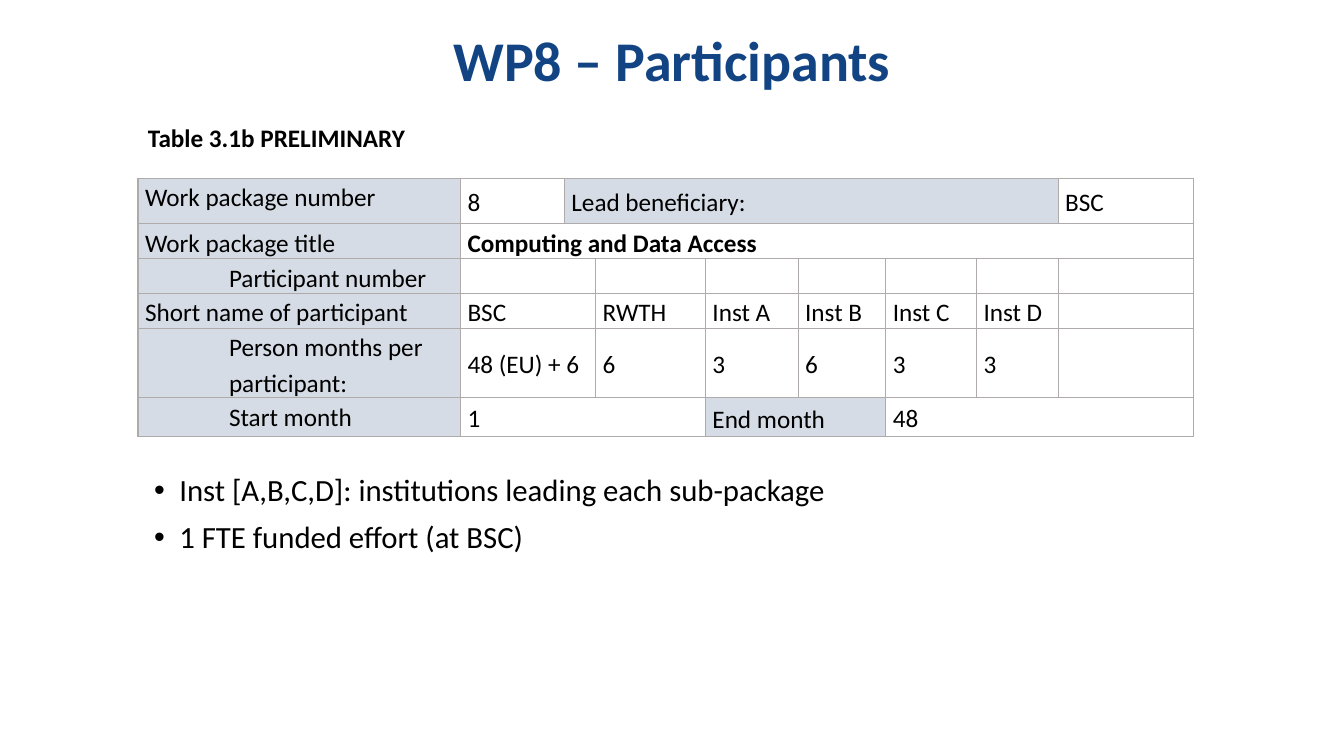
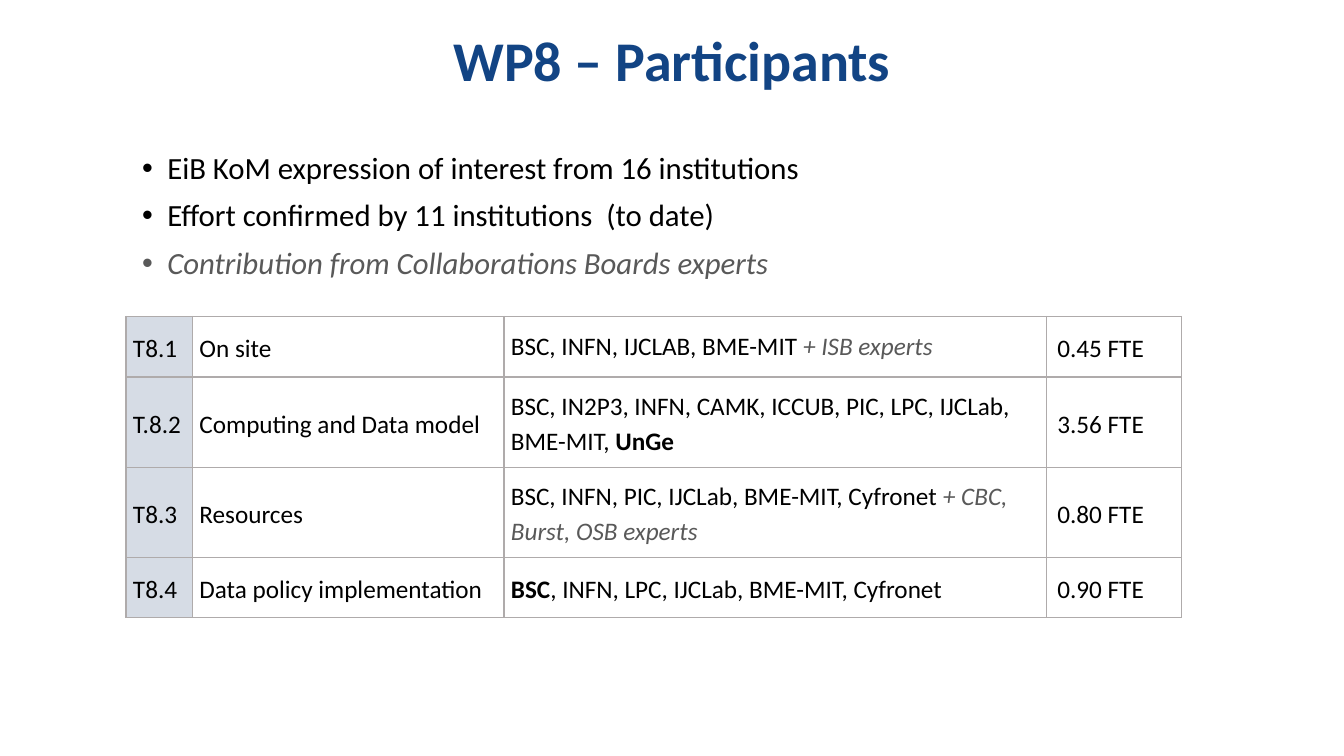
from dataclasses import dataclass, field

import lxml.etree
import pptx
import pptx.dml.color
import pptx.enum.shapes
import pptx.enum.text
import pptx.oxml.ns
import pptx.util

Pt = pptx.util.Pt
Rgb = pptx.dml.color.RGBColor
Anchor = pptx.enum.text.MSO_ANCHOR
Align = pptx.enum.text.PP_ALIGN
qn = pptx.oxml.ns.qn


class Theme:
    font = "Calibri"
    title_colour = "124484"
    text_colour = "000000"
    aside_colour = "595959"
    paper = "FFFFFF"
    label_fill = "D6DCE5"
    border = "AFABAB"
    border_width = 1
    paper_opacity = 60
    title_size = 40
    bullet_size = 22
    table_size = 18
    emphasis = {
        "plain": {},
        "bold": {"bold": True},
        "aside": {"italic": True, "colour": aside_colour},
    }


@dataclass
class Entry:
    content: object = ""
    span: int = 1
    label: bool = False
    anchor: object = Anchor.MIDDLE
    indent: float = 0
    padding: float = 0
    paragraph: dict = field(default_factory=lambda: {"line_spacing": 1.15})


def apply(target, values):
    for name, value in values.items():
        setattr(target, name, value)


def add_xml(parent, tag, **attributes):
    element = lxml.etree.SubElement(parent, qn(tag))
    for name, value in attributes.items():
        element.set(name, str(value))
    return element


class Deck:
    def __init__(self, theme, width, height):
        self.theme = theme
        self.presentation = pptx.Presentation()
        apply(self.presentation, {"slide_width": Pt(width), "slide_height": Pt(height)})
        self.width = width
        self.slide = None

    def new_slide(self, title):
        self.slide = self.presentation.slides.add_slide(self.presentation.slide_layouts[6])
        heading = self.text_box(0, 20.2, self.width, 63.4)
        self.add_text(heading.paragraphs[0], [(title, "bold")], self.theme.title_size,
                      {"alignment": Align.CENTER, "line_spacing": 0.9},
                      self.theme.title_colour)

    def text_box(self, left, top, width, height, wrap=True):
        box = self.slide.shapes.add_textbox(Pt(left), Pt(top), Pt(width), Pt(height))
        box.text_frame.word_wrap = wrap
        return box.text_frame

    def add_text(self, paragraph, content, size, layout, colour=None):
        apply(paragraph, layout)
        runs = [(content, "plain")] if isinstance(content, str) else content
        for text, emphasis in runs:
            run = paragraph.add_run()
            run.text = text
            values = {"name": self.theme.font, "size": Pt(size), "bold": False,
                      "italic": False, **self.theme.emphasis[emphasis]}
            run_colour = values.pop("colour", colour or self.theme.text_colour)
            apply(run.font, values)
            run.font.color.rgb = Rgb.from_string(run_colour)

    def caption(self, text, left, top, width, height):
        frame = self.text_box(left, top, width, height, wrap=False)
        self.add_text(frame.paragraphs[0], [(text, "bold")], self.theme.table_size, {})

    def bullets(self, points, left, top, width, height):
        panel = self.slide.shapes.add_shape(
            pptx.enum.shapes.MSO_SHAPE.RECTANGLE, Pt(left), Pt(top), Pt(width), Pt(height))
        panel.shadow.inherit = False
        panel.line.fill.background()
        panel.fill.solid()
        panel.fill.fore_color.rgb = Rgb.from_string(self.theme.paper)
        paper = panel._element.spPr.find(qn("a:solidFill")).find(qn("a:srgbClr"))
        add_xml(paper, "a:alpha", val=self.theme.paper_opacity * 1000)
        frame = panel.text_frame
        apply(frame, {"word_wrap": True, "vertical_anchor": Anchor.TOP,
                      "margin_left": Pt(11.5), "margin_top": Pt(14.4),
                      "margin_right": Pt(14.4), "margin_bottom": Pt(14.4)})
        for index, point in enumerate(points):
            paragraph = frame.add_paragraph() if index else frame.paragraphs[0]
            properties = paragraph._p.get_or_add_pPr()
            properties.set("marL", str(Pt(18)))
            properties.set("indent", str(-Pt(18)))
            add_xml(properties, "a:buFont", typeface="Arial")
            add_xml(properties, "a:buChar", char="•")
            self.add_text(paragraph, point, self.theme.bullet_size,
                          {"alignment": Align.LEFT, "line_spacing": 0.9,
                           "space_before": Pt(10 if index else 0)})

    def table(self, rows, left, top, widths, heights):
        frame = self.slide.shapes.add_table(
            len(heights), len(widths), Pt(left), Pt(top), Pt(sum(widths)), Pt(sum(heights)))
        grid = frame.table
        apply(grid, {"first_row": False, "horz_banding": False})
        for column, width in zip(grid.columns, widths):
            column.width = Pt(width)
        for row, height in zip(grid.rows, heights):
            row.height = Pt(height)
        for cell in grid.iter_cells():
            self.frame_cell(cell)
        for row_index, entries in enumerate(rows):
            column_index = 0
            for entry in entries:
                cell = grid.cell(row_index, column_index)
                column_index += entry.span
                if entry.span > 1:
                    cell.merge(grid.cell(row_index, column_index - 1))
                self.fill_cell(cell, entry)

    def frame_cell(self, cell):
        properties = cell._tc.get_or_add_tcPr()
        for side in ("a:lnL", "a:lnR", "a:lnT", "a:lnB"):
            line = add_xml(properties, side, w=Pt(self.theme.border_width))
            add_xml(add_xml(line, "a:solidFill"), "a:srgbClr", val=self.theme.border)
        apply(cell, {"margin_left": Pt(5), "margin_right": Pt(5),
                     "margin_top": Pt(0), "margin_bottom": Pt(0)})
        cell.fill.solid()
        cell.fill.fore_color.rgb = Rgb.from_string(self.theme.paper)

    def fill_cell(self, cell, entry):
        apply(cell, {"vertical_anchor": entry.anchor, "margin_top": Pt(entry.padding),
                     "margin_bottom": Pt(entry.padding)})
        if entry.label:
            cell.fill.fore_color.rgb = Rgb.from_string(self.theme.label_fill)
        if entry.content:
            paragraph = cell.text_frame.paragraphs[0]
            if entry.indent:
                properties = paragraph._p.get_or_add_pPr()
                properties.set("marL", str(Pt(entry.indent)))
                properties.set("indent", "0")
            self.add_text(paragraph, entry.content, self.theme.table_size, entry.paragraph)


def row_label(text, indent=0):
    return Entry(text, label=True, anchor=Anchor.TOP, indent=indent)


def participants(label, first, *others):
    return [label, Entry(first, span=2), *map(Entry, others)]


def task(number, name, institutions, effort, spacing=1.15):
    return [Entry(number, label=True), Entry(name),
            Entry(institutions, paragraph={"line_spacing": spacing, "space_after": Pt(6)}),
            Entry(effort, indent=3)]


def main():
    deck = Deck(Theme, 960, 540)
    title = "WP8 – Participants"
    label_indent = 60

    deck.new_slide(title)
    deck.bullets(["Inst [A,B,C,D]: institutions leading each sub-package",
                  "1 FTE funded effort (at BSC)"], 98.6, 324.7, 796.3, 113)
    work_package = [
        [row_label("Work package number"), Entry("8"),
         Entry("Lead beneficiary:", span=6, label=True), Entry("BSC")],
        [row_label("Work package title"),
         Entry([("Computing and Data Access", "bold")], span=8)],
        participants(row_label("Participant number", label_indent), *[""] * 7),
        participants(row_label("Short name of participant"),
                     "BSC", "RWTH", "Inst A", "Inst B", "Inst C", "Inst D", ""),
        participants(row_label("Person months per participant:", label_indent),
                     "48 (EU) + 6", "6", "3", "6", "3", "3", ""),
        [row_label("Start month", label_indent), Entry("1", span=3),
         Entry("End month", span=2, label=True, padding=1.4), Entry("48", span=3)],
    ]
    deck.table(work_package, 98.6, 127.4,
               [230.4, 74.2, 22.3, 78.5, 66.2, 62.6, 64.8, 58.3, 96.5],
               [32.4, 15.8, 15.8, 15.8, 32.4, 19.4])
    deck.caption("Table 3.1b PRELIMINARY", 98.6, 83.5, 200.2, 29)

    deck.new_slide(title)
    deck.bullets(["EiB KoM expression of interest from 16 institutions",
                  "Effort confirmed by 11 institutions  (to date)",
                  [("Contribution from Collaborations Boards experts", "aside")]],
                 90, 95, 796.3, 153.4)
    tasks = [
        task("T8.1", "On site",
             [("BSC, INFN, IJCLAB, BME-MIT ", "plain"), ("+ ISB experts", "aside")],
             "0.45 FTE", spacing=1.0),
        task("T.8.2", "Computing and Data model",
             [("BSC, IN2P3, INFN, CAMK, ICCUB, PIC, LPC, IJCLab, BME-MIT, ", "plain"),
              ("UnGe", "bold")], "3.56 FTE"),
        task("T8.3", "Resources",
             [("BSC, INFN, PIC, IJCLab, BME-MIT, Cyfronet ", "plain"),
              ("+ CBC, Burst, OSB experts", "aside")], "0.80 FTE"),
        task("T8.4", "Data policy implementation",
             [("BSC", "bold"), (", INFN, LPC, IJCLab, BME-MIT, Cyfronet", "plain")],
             "0.90 FTE"),
    ]
    deck.table(tasks, 90, 226.1, [47.5, 222.5, 387.3, 96.5], [43.2, 64.4, 64.4, 43.2])

    deck.presentation.save("out.pptx")


if __name__ == "__main__":
    main()
